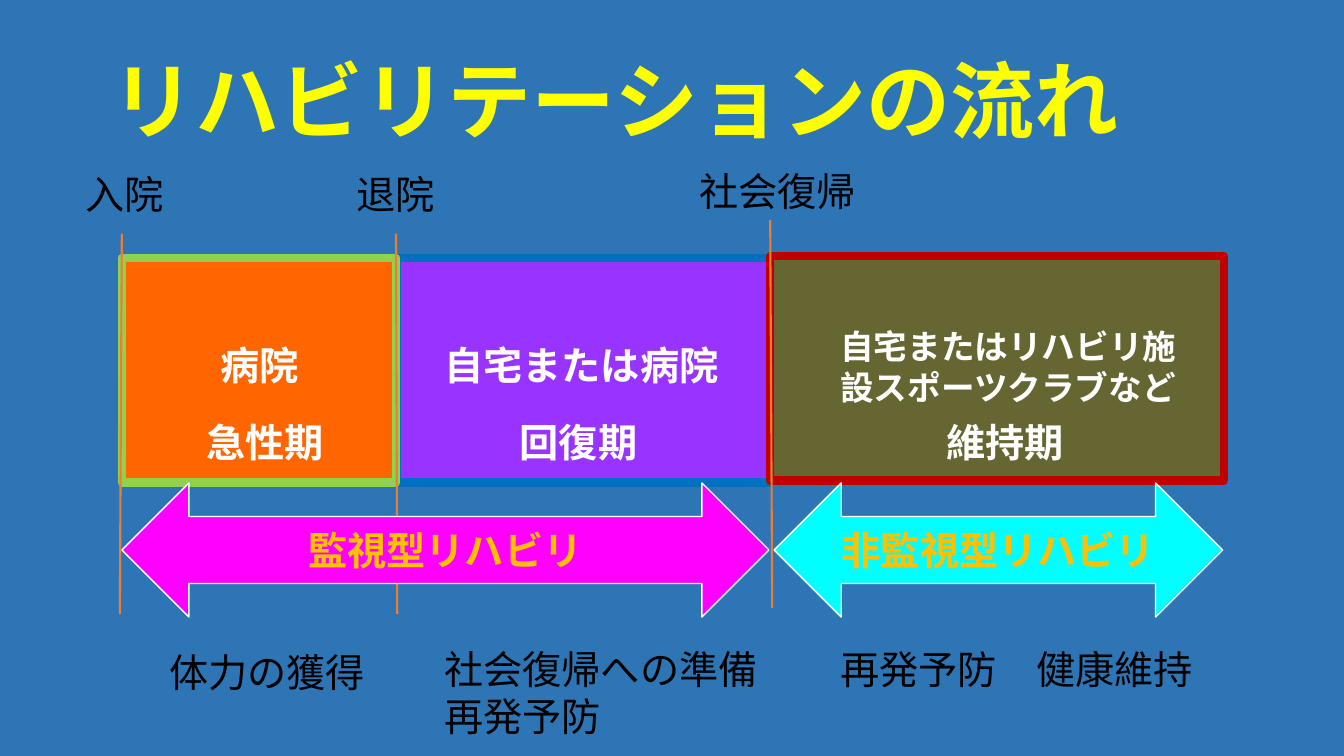
from lxml import etree
from pptx import Presentation
from pptx.dml.color import RGBColor
from pptx.enum.shapes import MSO_CONNECTOR as Connector, MSO_SHAPE as Shape
from pptx.enum.text import MSO_ANCHOR as Anchor, MSO_AUTO_SIZE as AutoSize, PP_ALIGN as Align
from pptx.oxml.ns import qn
from pptx.util import Cm, Pt

FONT = "Noto Sans CJK JP"
WHITE, BLACK, GOLD = "FFFFFF", "000000", "FFC000"


def color(value):
    return RGBColor.from_string(value)


def add_run(paragraph, text, size, value, bold):
    run = paragraph.add_run()
    run.text = text
    run.font.name = FONT
    run.font.size = Pt(size)
    run.font.bold = bold
    run.font.color.rgb = color(value)
    # Japanese glyphs take the East Asian typeface
    latin = run.font._element.find(qn("a:latin"))
    east_asian = etree.Element(qn("a:ea"), typeface=FONT)
    latin.addnext(east_asian)


presentation = Presentation()
presentation.slide_width, presentation.slide_height = Cm(33.87), Cm(19.05)
slide = presentation.slides.add_slide(presentation.slide_layouts[6])
slide.background.fill.solid()
slide.background.fill.fore_color.rgb = color("2E75B6")

# Title
title = slide.shapes.add_textbox(Cm(2.57), Cm(1.32), Cm(28.75), Cm(2.69))
title.text_frame.word_wrap = True
title.text_frame.vertical_anchor = Anchor.MIDDLE
paragraph = title.text_frame.paragraphs[0]
paragraph.line_spacing = 0.9
add_run(paragraph, "リハビリテーションの流れ", 60, "FFFF00", True)

# Phase boxes
phases = [
    (10.01, 6.5, 9.4, "9933FF", "0070C0"),
    (3.07, 6.5, 6.91, "FF6600", "92D050"),
    (19.41, 6.45, 11.43, "666633", "C00000"),
]
for left, top, width, fill, border in phases:
    box = slide.shapes.add_shape(
        Shape.FLOWCHART_PROCESS, Cm(left), Cm(top), Cm(width), Cm(5.66))
    box.shadow.inherit = False
    box.fill.solid()
    box.fill.fore_color.rgb = color(fill)
    box.line.color.rgb = color(border)
    box.line.width = Pt(6)

# Milestone lines
milestones = [
    (3.07, 5.89, 3.02, 15.47),
    (9.98, 5.89, 10.01, 15.47),
    (19.41, 5.54, 19.46, 15.32),
]
for ends in milestones:
    line = slide.shapes.add_connector(Connector.STRAIGHT, *map(Cm, ends))
    line.line.color.rgb = color("ED7D31")
    line.line.width = Pt(1.5)
    etree.SubElement(line._element.spPr, qn("a:effectLst"))

# Labels: left, top, width, height, size, colour, lines
labels = [
    # Place of care
    (5.31, 8.48, 3.35, 1.45, 28, WHITE, ["病院"]),
    (10.95, 8.48, 7.59, 1.45, 28, WHITE, ["自宅または病院"]),
    (20.93, 8.1, 9.32, 2.31, 24, WHITE, ["自宅またはリハビリ施設スポーツクラブなど"]),
    # Phase
    (4.95, 10.41, 3.78, 1.45, 28, WHITE, ["急性期"]),
    (12.85, 10.41, 4.62, 1.45, 28, WHITE, ["回復期"]),
    (23.6, 10.41, 4.19, 1.45, 28, WHITE, ["維持期"]),
    # Milestone
    (1.9, 4.17, 3.53, 1.45, 28, BLACK, ["入院"]),
    (8.74, 4.17, 3.02, 1.45, 28, BLACK, ["退院"]),
    (17.37, 4.09, 4.67, 1.45, 28, BLACK, ["社会復帰"]),
    # Goal
    (4.01, 16.21, 5.66, 1.45, 28, BLACK, ["体力の獲得"]),
    (10.95, 16.13, 8.99, 2.64, 28, BLACK, ["社会復帰への準備", "再発予防"]),
    (20.93, 16.13, 9.47, 1.45, 28, BLACK, ["再発予防　健康維持"]),
]
for left, top, width, height, size, value, lines in labels:
    label = slide.shapes.add_textbox(Cm(left), Cm(top), Cm(width), Cm(height))
    frame = label.text_frame
    frame.word_wrap = True
    frame.auto_size = AutoSize.SHAPE_TO_FIT_TEXT
    for index, text in enumerate(lines):
        paragraph = frame.add_paragraph() if index else frame.paragraphs[0]
        add_run(paragraph, text, size, value, value == WHITE)

# Rehabilitation type arrows
arrows = [
    (3.07, 16.31, "FF00FF", "監視型リハビリ"),
    (19.51, 11.3, "00FFFF", "非監視型リハビリ"),
]
for left, width, fill, text in arrows:
    arrow = slide.shapes.add_shape(
        Shape.LEFT_RIGHT_ARROW, Cm(left), Cm(12.17), Cm(width), Cm(3.38))
    arrow.shadow.inherit = False
    arrow.fill.solid()
    arrow.fill.fore_color.rgb = color(fill)
    arrow.line.color.rgb = color(WHITE)
    arrow.line.width = Pt(1)
    arrow.text_frame.word_wrap = True
    arrow.text_frame.vertical_anchor = Anchor.MIDDLE
    paragraph = arrow.text_frame.paragraphs[0]
    paragraph.alignment = Align.CENTER
    add_run(paragraph, text, 28, GOLD, True)

presentation.save("out.pptx")
